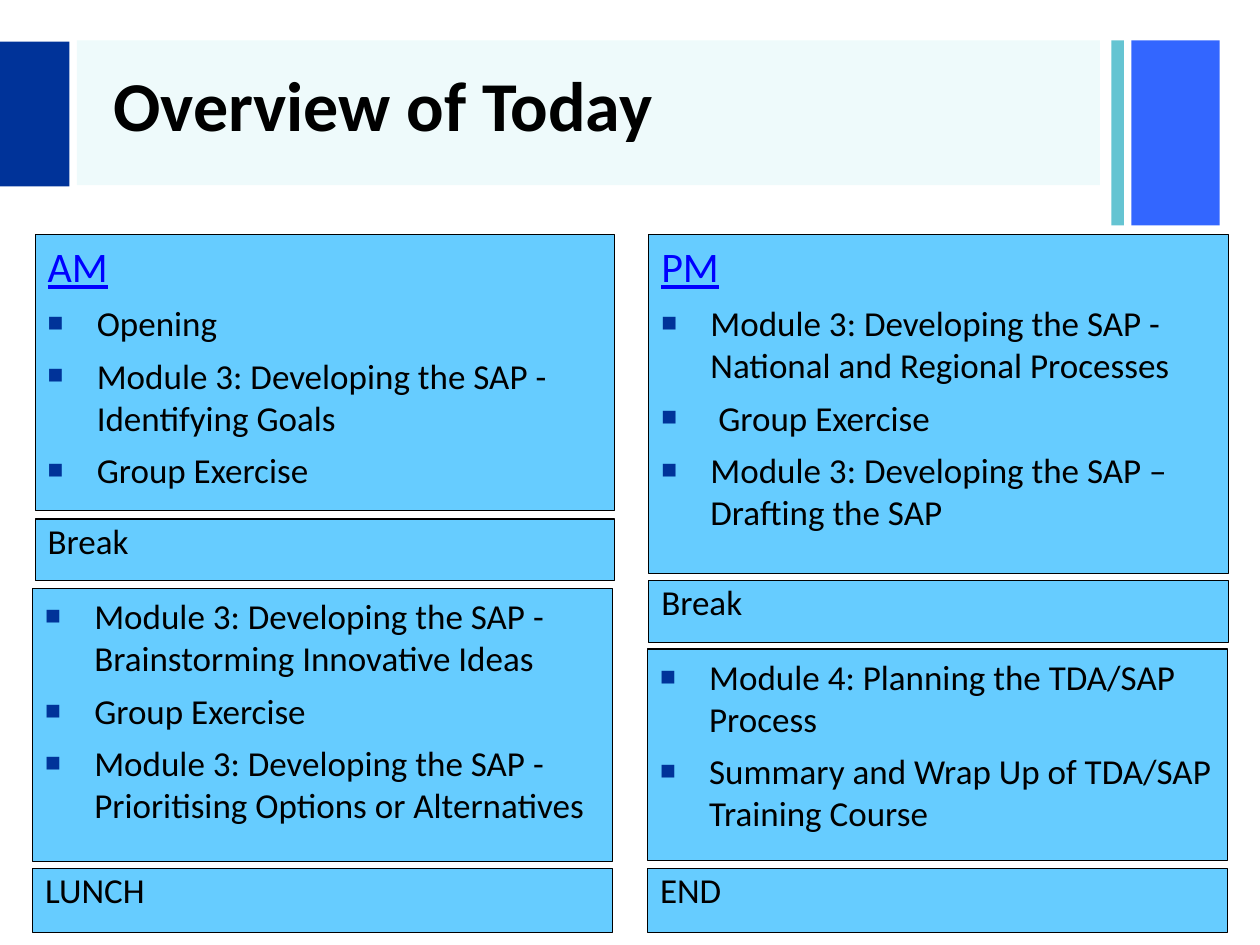
"""Build the one-slide overview of the day's morning and afternoon sessions."""
from lxml import etree
from pptx import Presentation
from pptx import util as u
from pptx.dml.color import RGBColor
from pptx.enum import shapes, text
from pptx.oxml.ns import qn

COLORS = {"black": "000000", "panel": "66CCFF", "heading": "0000FF", "navy": "003399",
          "blue": "3366FF", "teal": "65C4D2", "tint": "14C5D0"}
FONT = "Calibri"


def add_rectangle(slide, left, top, width, height, color, outline=None):
    shape = slide.shapes.add_shape(shapes.MSO_SHAPE.RECTANGLE, u.Inches(left), u.Inches(top),
                                   u.Inches(width), u.Inches(height))
    shape.shadow.inherit = False
    shape.fill.solid()
    shape.fill.fore_color.rgb = RGBColor.from_string(COLORS[color])
    if outline:
        shape.line.color.rgb = RGBColor.from_string(COLORS[outline])
        shape.line.width = u.Pt(0.75)
    else:
        shape.line.fill.background()
    return shape


def write(paragraph, words, size=20, color="black", bold=False, underline=False,
          before=0, hanging=0, bullet=False):
    paragraph.alignment = text.PP_ALIGN.LEFT
    paragraph.space_before = u.Pt(before)
    run = paragraph.add_run()
    run.text = words
    run.font.name = FONT
    run.font.size = u.Pt(size)
    run.font.bold = bold
    run.font.underline = underline
    run.font.color.rgb = RGBColor.from_string(COLORS[color])
    properties = paragraph._p.get_or_add_pPr()
    properties.set("marL", str(u.Inches(hanging)))
    properties.set("indent", str(u.Inches(-hanging)))
    if bullet:
        bullet_color = etree.SubElement(properties, qn("a:buClr"))
        etree.SubElement(bullet_color, qn("a:srgbClr"), val=COLORS["navy"])
        etree.SubElement(properties, qn("a:buSzPct"), val="75000")
        etree.SubElement(properties, qn("a:buFont"), typeface="Arial")
        etree.SubElement(properties, qn("a:buChar"), char="■")


presentation = Presentation()
presentation.slide_width = u.Inches(10)
presentation.slide_height = u.Inches(7.5)
slide = presentation.slides.add_slide(presentation.slide_layouts[5])

add_rectangle(slide, 8.98, 0.32, 0.7, 1.47, "blue")
add_rectangle(slide, 8.82, 0.32, 0.1, 1.47, "teal")
title_band = add_rectangle(slide, 0.61, 0.32, 8.12, 1.15, "tint")
tint_color = title_band._element.spPr.find(qn("a:solidFill"))[0]
etree.SubElement(tint_color, qn("a:alpha"), val="7000")
add_rectangle(slide, 0, 0.33, 0.55, 1.15, "navy")

title = slide.shapes.title
title.left, title.top = u.Inches(0.8), u.Inches(0.2)
title.width, title.height = u.Inches(9), u.Inches(1.25)
title.text_frame.vertical_anchor = text.MSO_ANCHOR.MIDDLE
title.text_frame.auto_size = text.MSO_AUTO_SIZE.NONE
write(title.text_frame.paragraphs[0], "Overview of Today", size=40, bold=True)
slide.shapes._spTree.append(title._element)

PANEL_WIDTH = 4.6
STYLES = {
    "heading": dict(size=24, color="heading", underline=True, before=20),
    "item": dict(before=6, bullet=True),
    "pause": dict(before=4),
}
panels = [
    (0.28, 1.86, 2.19, "AM", ["Opening", "Module 3: Developing the SAP - Identifying Goals",
                              "Group Exercise"]),
    (0.26, 4.67, 2.17, None, ["Module 3: Developing the SAP - Brainstorming Innovative Ideas",
                              "Group Exercise",
                              "Module 3: Developing the SAP - Prioritising Options or Alternatives"]),
    (0.28, 4.12, 0.49, "Break", []),
    (0.26, 6.89, 0.51, "LUNCH", []),
    (5.15, 1.86, 2.69, "PM", ["Module 3: Developing the SAP - National and Regional Processes",
                              " Group Exercise",
                              "Module 3: Developing the SAP – Drafting the SAP"]),
    (5.14, 5.15, 1.68, None, ["Module 4: Planning the TDA/SAP Process",
                              "Summary and Wrap Up of TDA/SAP Training Course"]),
    (5.15, 4.61, 0.49, "Break", []),
    (5.14, 6.89, 0.51, "END", []),
]
for left, top, height, label, items in panels:
    panel = add_rectangle(slide, left, top, PANEL_WIDTH, height, "panel", outline="black")
    frame = panel.text_frame
    frame.word_wrap = True
    frame.vertical_anchor = text.MSO_ANCHOR.TOP
    if not items:
        frame.margin_top = frame.margin_bottom = 0
    lines = [(item, "item") for item in items]
    if label:
        lines.insert(0, (label, "heading" if items else "pause"))
    for index, (words, style) in enumerate(lines):
        paragraph = frame.add_paragraph() if index else frame.paragraphs[0]
        write(paragraph, words, hanging=0.39, **STYLES[style])

presentation.save("out.pptx")
